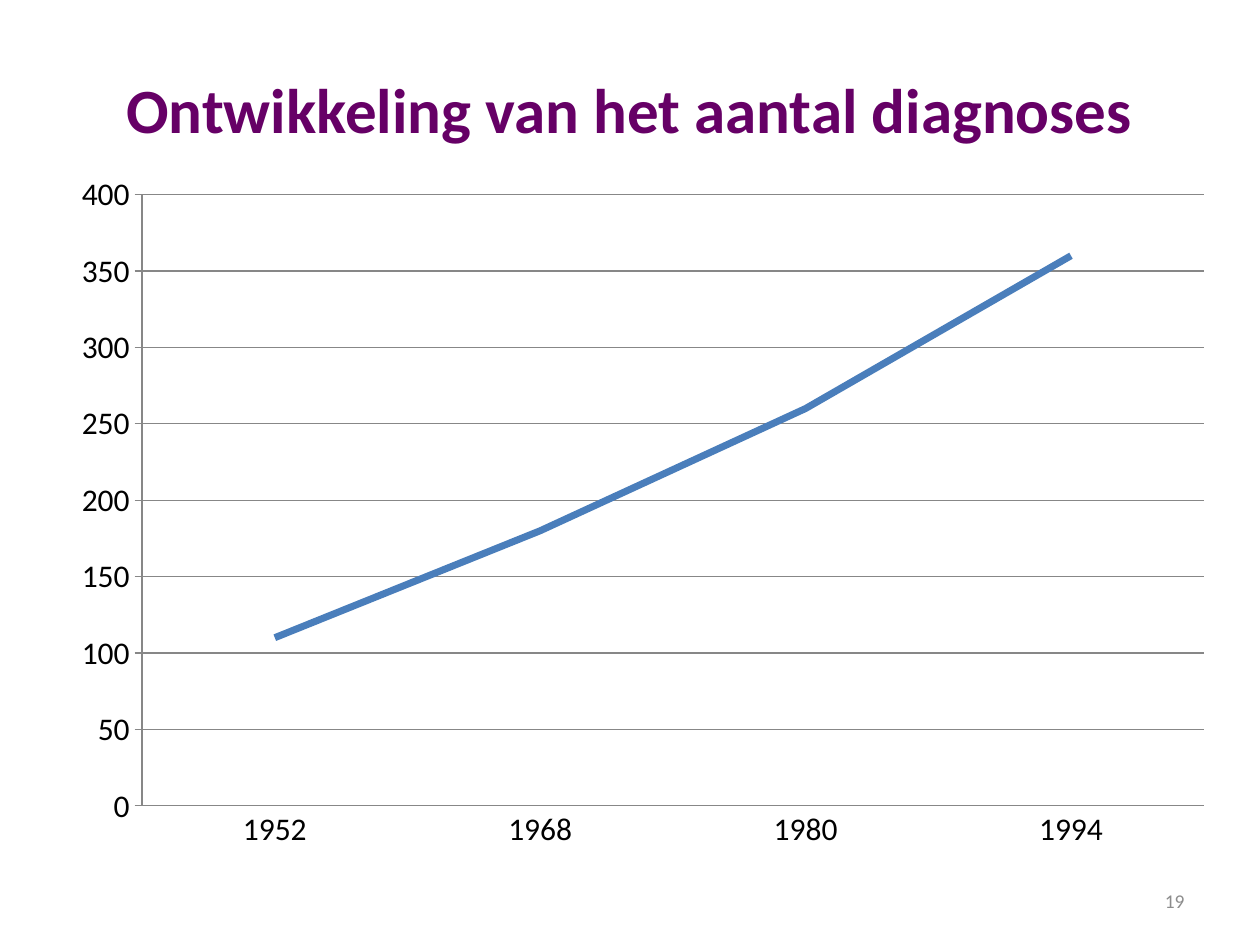
from lxml import etree
from pptx import Presentation, util as u
from pptx.chart.data import CategoryChartData
from pptx.dml.color import RGBColor
from pptx.enum import chart as ch, text as t
from pptx.oxml.ns import qn

WIDTH, HEIGHT = 10, 7.5
FONT = "Calibri"
COLORS = {"title": "660066", "text": "000000", "line": "4A7EBB",
          "axis": "878787", "number": "8C8C8C"}
TITLE = "Ontwikkeling van het aantal diagnoses"
PAGE_NUMBER = "19"
DIAGNOSES = {"1952": 110, "1968": 180, "1980": 260, "1994": 360}
AREA_PERCENT = {"title": (4.7, 7.5, 90.5, 7.9),
                "chart": (4.7, 17.07, 92.7, 74.27),
                "number": (71.7, 92.7, 23.3, 5.3)}
PLOT_PERCENT = {"x": 7.1, "y": 4.75, "w": 90.9, "h": 87.1}


def color(name):
    return RGBColor.from_string(COLORS[name])


def area(name):
    return [u.Inches(percent / 100 * size)
            for percent, size in zip(AREA_PERCENT[name], (WIDTH, HEIGHT) * 2)]


def style(font, size, name, bold=False):
    font.name, font.size, font.bold = FONT, u.Pt(size), bold
    font.color.rgb = color(name)


def write(box, words, size, name, align, bold=False):
    frame = box.text_frame
    frame.word_wrap = True
    frame.auto_size = t.MSO_AUTO_SIZE.NONE
    frame.vertical_anchor = t.MSO_ANCHOR.MIDDLE
    para = frame.paragraphs[0]
    para.alignment = align
    span = para.add_run()
    span.text = words
    style(span.font, size, name, bold)


def set_plot_area(chart):
    plot_area = chart._chartSpace.find(".//" + qn("c:plotArea"))
    for old in plot_area.findall(qn("c:layout")):
        plot_area.remove(old)
    layout = etree.Element(qn("c:layout"))
    manual = etree.SubElement(layout, qn("c:manualLayout"))
    settings = {"layoutTarget": "inner", "xMode": "edge", "yMode": "edge"}
    settings.update({tag: percent / 100 for tag, percent in PLOT_PERCENT.items()})
    for tag, value in settings.items():
        etree.SubElement(manual, qn("c:" + tag)).set("val", str(value))
    plot_area.insert(0, layout)


def add_line_chart(page):
    data = CategoryChartData()
    data.categories = list(DIAGNOSES)
    data.add_series("Series 1", list(DIAGNOSES.values()))
    chart = page.shapes.add_chart(ch.XL_CHART_TYPE.LINE, *area("chart"), data).chart
    chart.has_title = chart.has_legend = False
    style(chart.font, 18, "text")
    set_plot_area(chart)
    years, counts = chart.category_axis, chart.value_axis
    years.major_tick_mark = ch.XL_TICK_MARK.NONE
    counts.major_tick_mark = ch.XL_TICK_MARK.OUTSIDE
    years.has_major_gridlines = False
    counts.has_major_gridlines = True
    counts.minimum_scale, counts.maximum_scale, counts.major_unit = 0, 400, 50
    for part in (years, counts, counts.major_gridlines):
        part.format.line.color.rgb = color("axis")
        part.format.line.width = u.Pt(0.75)
    chart.plots[0].vary_by_categories = False
    series = chart.plots[0].series[0]
    series.smooth = False
    series.marker.style = ch.XL_MARKER_STYLE.NONE
    series.format.line.color.rgb = color("line")
    series.format.line.width = u.Pt(4)


deck = Presentation()
deck.slide_width, deck.slide_height = u.Inches(WIDTH), u.Inches(HEIGHT)
page = deck.slides.add_slide(deck.slide_layouts[5])
title = page.shapes.title
title.left, title.top, title.width, title.height = area("title")
write(title, TITLE, 36, "title", t.PP_ALIGN.CENTER, bold=True)
add_line_chart(page)
number = page.shapes.add_textbox(*area("number"))
write(number, PAGE_NUMBER, 11.1, "number", t.PP_ALIGN.RIGHT)
deck.save("out.pptx")
